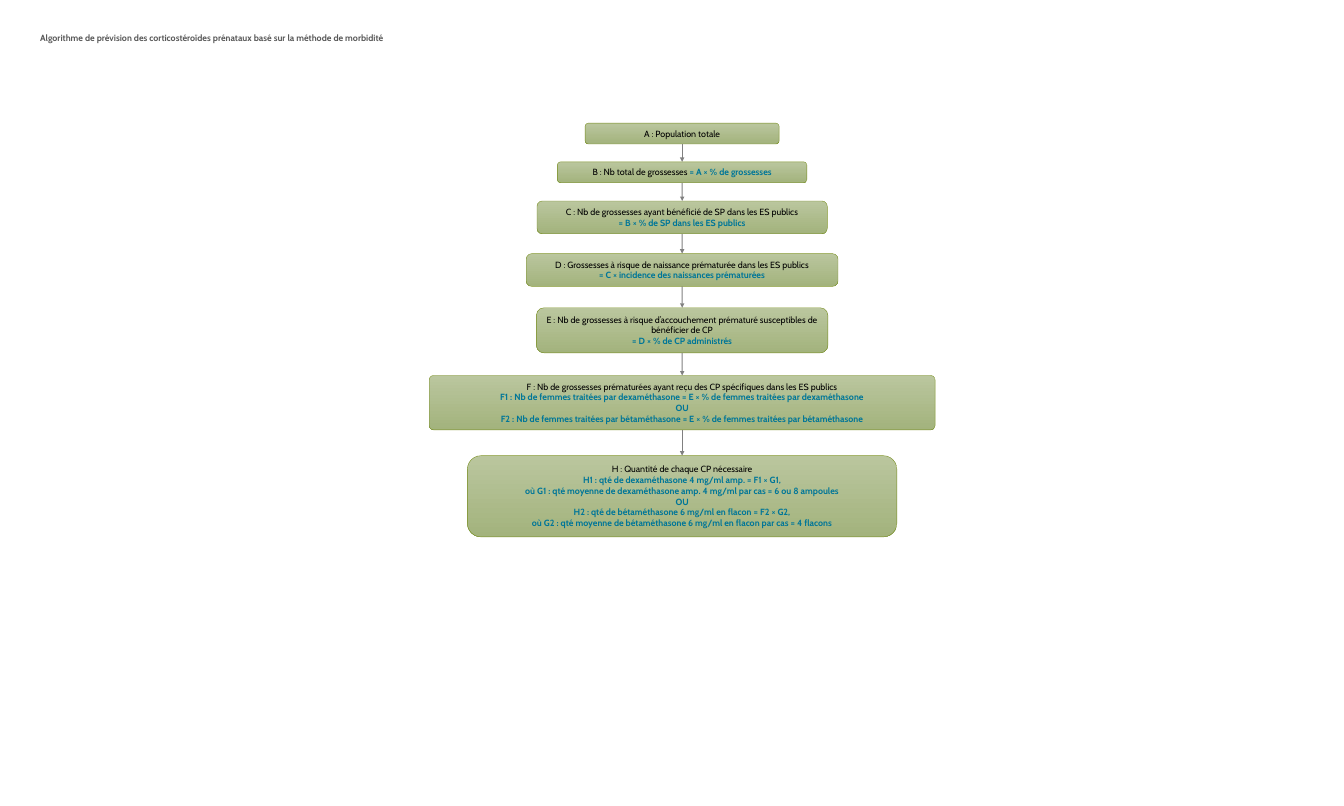
import pptx
import pptx.dml.color
import pptx.enum.dml
import pptx.enum.shapes
import pptx.enum.text
import pptx.oxml
import pptx.oxml.ns
import pptx.util
from dataclasses import dataclass

Cm = pptx.util.Cm
Pt = pptx.util.Pt


@dataclass(frozen=True)
class Theme:
    font: str = "Cabin"
    size: int = 12
    title: str = "595959"
    label: str = "000000"
    formula: str = "007698"
    box_top: str = "BAC69E"
    box_bottom: str = "A3B37D"
    border: str = "788E1E"
    arrow: str = "808080"


theme = Theme()


def rgb(value):
    return pptx.dml.color.RGBColor.from_string(value)


def add_run(p, text, color, bold):
    r = p.add_run()
    r.text = text
    r.font.name = theme.font
    r.font.size = Pt(theme.size)
    r.font.bold = bold
    r.font.color.rgb = rgb(color)


prs = pptx.Presentation()
prs.slide_width = Cm(63.5)
prs.slide_height = Cm(38.1)
s = prs.slides.add_slide(prs.slide_layouts[6])

title = s.shapes.add_textbox(Cm(1.65), Cm(1.42), Cm(20.83), Cm(0.77))
tf = title.text_frame
tf.word_wrap = True
tf.auto_size = pptx.enum.text.MSO_AUTO_SIZE.SHAPE_TO_FIT_TEXT
p = tf.paragraphs[0]
p.space_before = Pt(9)
p.space_after = Pt(15)
add_run(p, "Algorithme de prévision des corticostéroïdes prénataux basé sur la méthode de morbidité",
        theme.title, True)

# Each step: top, width, height, corner ratio, label, formula on the same line, formula lines
CENTER = 32.23
CORNER = 0.1667
steps = [
    (5.82, 9.17, 0.99, CORNER, "A : Population totale", "", []),
    (7.65, 11.79, 0.99, CORNER, "B : Nb total de grossesses ", "= A × % de grossesses", []),
    (9.5, 13.72, 1.55, CORNER,
     "C : Nb de grossesses ayant bénéficié de SP dans les ES publics", "",
     ["= B × % de SP dans les ES publics"]),
    (11.99, 14.73, 1.55, CORNER,
     "D : Grossesses à risque de naissance prématurée dans les ES publics", "",
     ["= C × incidence des naissances prématurées"]),
    (14.55, 13.77, 2.13, CORNER,
     "E : Nb de grossesses à risque d’accouchement prématuré susceptibles de bénéficier de CP", "",
     ["= D × % de CP administrés"]),
    (17.75, 23.9, 2.57, 0.08,
     "F : Nb de grossesses prématurées ayant reçu des CP spécifiques dans les ES publics", "",
     ["F1 : Nb de femmes traitées par dexaméthasone = E × % de femmes traitées par dexaméthasone",
      "OU",
      "F2 : Nb de femmes traitées par bétaméthasone = E × % de femmes traitées par bétaméthasone"]),
    (21.54, 20.29, 3.84, CORNER, "H : Quantité de chaque CP nécessaire", "",
     ["H1 : qté de dexaméthasone 4 mg/ml amp. = F1 × G1,",
      "où G1 : qté moyenne de dexaméthasone amp. 4 mg/ml par cas = 6 ou 8 ampoules",
      "OU",
      "H2 : qté de bétaméthasone 6 mg/ml en flacon = F2 × G2,",
      "où G2 : qté moyenne de bétaméthasone 6 mg/ml en flacon par cas = 4 flacons"]),
]

boxes = []
for top, width, height, corner, label, inline, formulas in steps:
    sp = s.shapes.add_shape(pptx.enum.shapes.MSO_SHAPE.ROUNDED_RECTANGLE,
                            Cm(CENTER - width / 2), Cm(top), Cm(width), Cm(height))
    sp.adjustments[0] = corner
    sp.shadow.inherit = False
    sp.fill.gradient()
    sp.fill.gradient_angle = 270
    for stop, color in zip(sp.fill.gradient_stops, (theme.box_top, theme.box_bottom)):
        stop.color.rgb = rgb(color)
    sp.line.color.rgb = rgb(theme.border)
    sp.line.width = Pt(0.5)

    tf = sp.text_frame
    tf.word_wrap = True
    tf.auto_size = pptx.enum.text.MSO_AUTO_SIZE.SHAPE_TO_FIT_TEXT
    tf.vertical_anchor = pptx.enum.text.MSO_ANCHOR.MIDDLE
    tf.margin_left = tf.margin_right = tf.margin_top = tf.margin_bottom = Cm(0.18)
    p = tf.paragraphs[0]
    p.alignment = pptx.enum.text.PP_ALIGN.CENTER
    add_run(p, label, theme.label, False)
    if inline:
        add_run(p, inline, theme.formula, True)
    for formula in formulas:
        p = tf.add_paragraph()
        p.alignment = pptx.enum.text.PP_ALIGN.CENTER
        add_run(p, formula, theme.formula, True)
    boxes.append(sp)

for upper, lower in zip(boxes, boxes[1:]):
    arrow = s.shapes.add_connector(pptx.enum.shapes.MSO_CONNECTOR.STRAIGHT, 0, 0, 0, 0)
    arrow.begin_connect(upper, 2)
    arrow.end_connect(lower, 0)
    arrow.line.color.rgb = rgb(theme.arrow)
    arrow.line.width = Pt(1.5)
    ns = pptx.oxml.ns.nsdecls("a")
    arrow.line._get_or_add_ln().append(pptx.oxml.parse_xml(f'<a:tailEnd {ns} type="triangle"/>'))
    arrow._element.spPr.append(pptx.oxml.parse_xml(f"<a:effectLst {ns}/>"))

prs.save("out.pptx")
